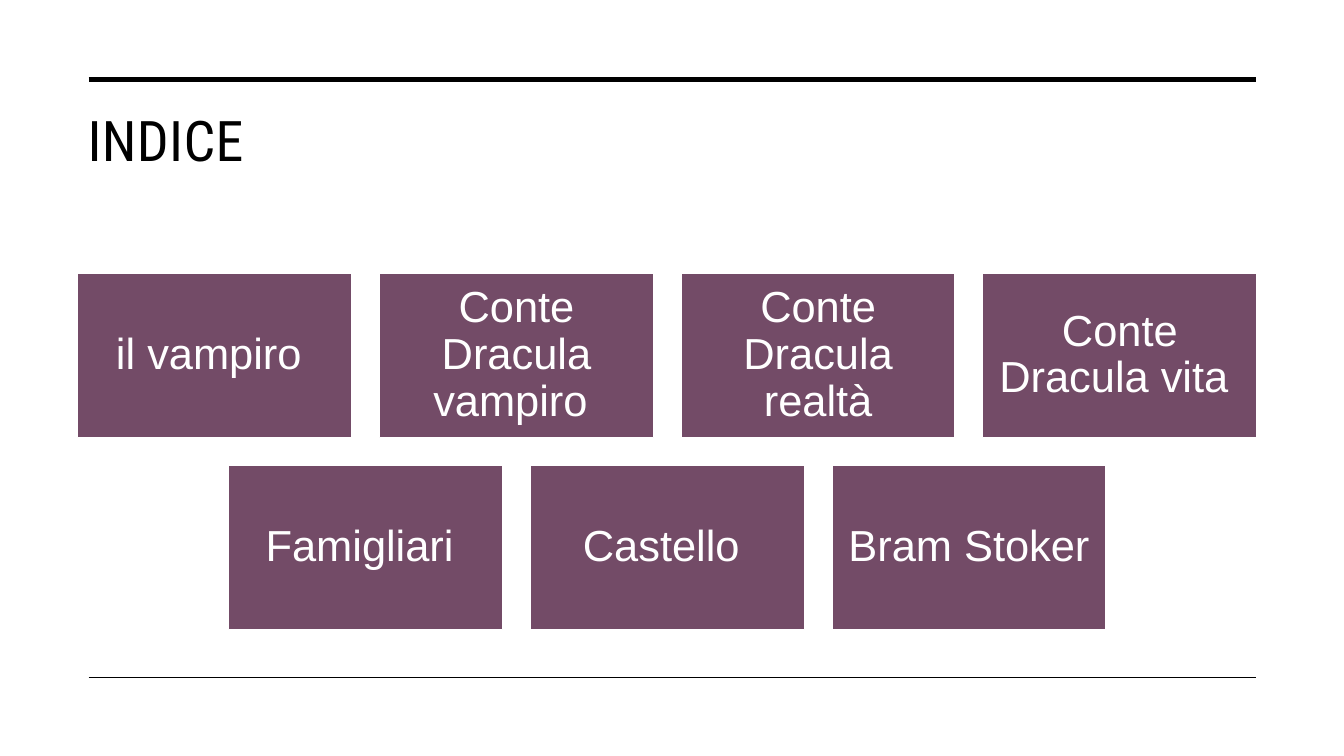
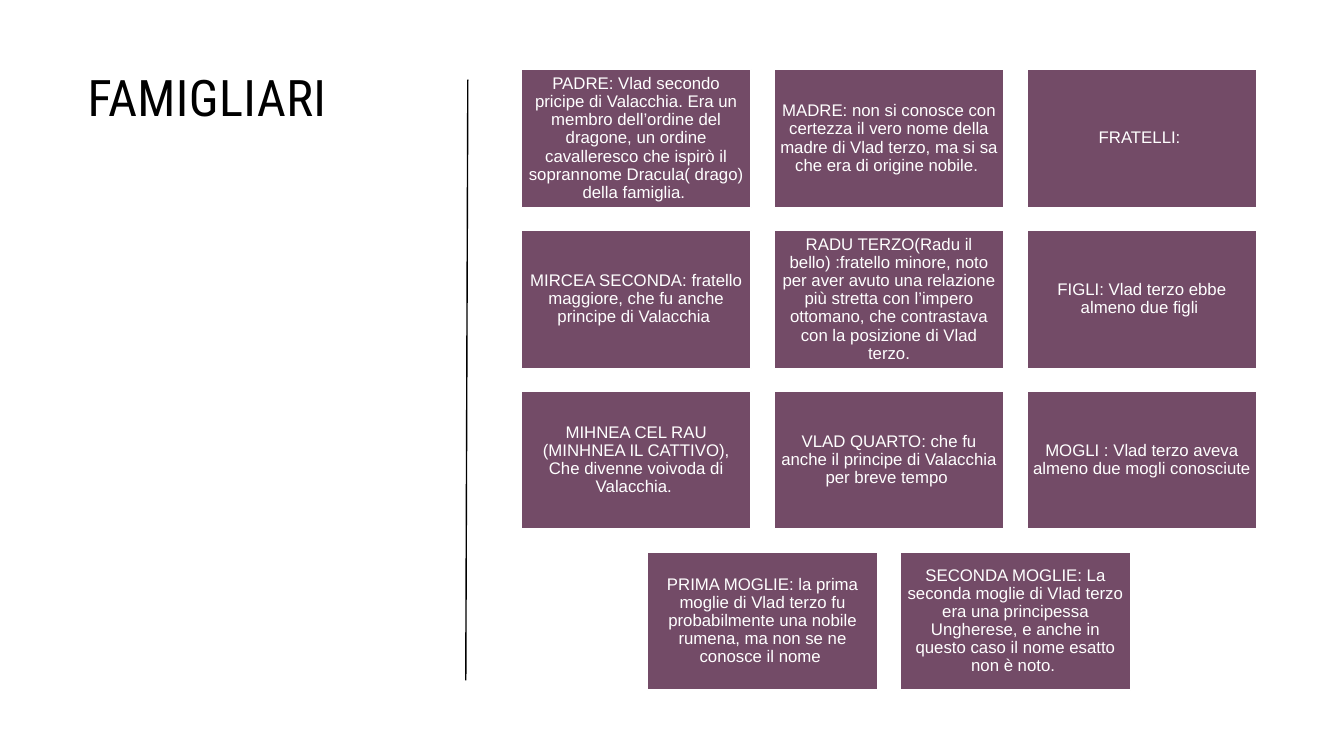
import pptx
import pptx.dml.color
import pptx.enum.shapes
import pptx.enum.text
import pptx.util
from lxml import etree
from pptx.util import Inches

COLORS = {"ink": "000000", "card": "734B67", "paper": "FFFFFF"}
TITLE_FONT = "Roboto Condensed"
CARD_FONT = "Arial"
CARD_ASPECT = 0.6  # height over width
CARD_GAP = 0.1  # share of the card width

SLIDES = [
    {
        "title": "INDICE", "title_box": (0.77, 1, 11.69, 1.43), "title_size": 40,
        # start x, start y, end x, end y, width in points
        "rules": [(0.88, 0.79, 12.46, 0.79, 3.5), (0.88, 6.72, 12.46, 6.72, 1)],
        "origin": (0.77, 2.71), "columns": 4, "card_width": 2.72,
        "card_size": 31, "inset": 0.13,
        "cards": [
            "il vampiro ",
            "Conte Dracula vampiro ",
            "Conte Dracula realtà",
            "Conte Dracula vita ",
            "Famigliari ",
            "Castello ",
            "Bram Stoker ",
        ],
    },
    {
        "title": "FAMIGLIARI", "title_box": (0.77, 0.61, 3.62, 5.75), "title_size": 36,
        "rules": [(4.62, 6.75, 4.64, 0.79, 1)],
        "origin": (5.17, 0.69), "columns": 3, "card_width": 2.28,
        "card_size": 12, "inset": 0.05,
        "cards": [
            "PADRE: Vlad secondo pricipe di Valacchia. Era un membro dell’ordine del "
            "dragone, un ordine cavalleresco che ispirò il soprannome Dracula( drago) "
            "della famiglia. ",
            "MADRE: non si conosce con certezza il vero nome della madre di Vlad terzo, "
            "ma si sa che era di origine nobile. ",
            "FRATELLI: ",
            "MIRCEA SECONDA: fratello maggiore, che fu anche principe di Valacchia ",
            "RADU TERZO(Radu il bello) :fratello minore, noto per aver avuto una "
            "relazione più stretta con l’impero ottomano, che contrastava con la "
            "posizione di Vlad terzo.",
            "FIGLI: Vlad terzo ebbe almeno due figli ",
            "MIHNEA CEL RAU (MINHNEA IL CATTIVO), Che divenne voivoda di Valacchia. ",
            "VLAD QUARTO: che fu anche il principe di Valacchia per breve tempo ",
            "MOGLI : Vlad terzo aveva almeno due mogli conosciute ",
            "PRIMA MOGLIE: la prima moglie di Vlad terzo fu probabilmente una nobile "
            "rumena, ma non se ne conosce il nome ",
            "SECONDA MOGLIE: La seconda moglie di Vlad terzo era una principessa "
            "Ungherese, e anche in questo caso il nome esatto non è noto. ",
        ],
    },
]


def color(name):
    return pptx.dml.color.RGBColor.from_string(COLORS[name])


def set_text(shape, text, font_name, size, color_name):
    """Write one wrapped paragraph and return it."""
    shape.text_frame.word_wrap = True
    shape.text_frame.text = text
    paragraph = shape.text_frame.paragraphs[0]
    font = paragraph.runs[0].font
    font.name = font_name
    font.size = pptx.util.Pt(size)
    font.color.rgb = color(color_name)
    return paragraph


presentation = pptx.Presentation()
presentation.slide_width = Inches(13.33)
presentation.slide_height = Inches(7.5)

for content in SLIDES:
    slide = presentation.slides.add_slide(presentation.slide_layouts[6])

    # Rules
    for start_x, start_y, end_x, end_y, weight in content["rules"]:
        rule = slide.shapes.add_connector(
            pptx.enum.shapes.MSO_CONNECTOR.STRAIGHT,
            Inches(start_x), Inches(start_y), Inches(end_x), Inches(end_y))
        rule.line.color.rgb = color("ink")
        rule.line.width = pptx.util.Pt(weight)
        properties = rule.element.spPr
        etree.SubElement(properties, pptx.oxml.ns.qn("a:effectLst"))

    # Title, with slightly open letter spacing
    title = slide.shapes.add_textbox(*map(Inches, content["title_box"]))
    paragraph = set_text(title, content["title"], TITLE_FONT, content["title_size"], "ink")
    paragraph.runs[0].font._element.set("spc", "30")

    # Cards in rows, a short last row centred
    cards, columns = content["cards"], content["columns"]
    left, top = content["origin"]
    width = content["card_width"]
    height = width * CARD_ASPECT
    gap = width * CARD_GAP
    for index, text in enumerate(cards):
        row, column = divmod(index, columns)
        missing = max(0, (row + 1) * columns - len(cards))
        card = slide.shapes.add_shape(
            pptx.enum.shapes.MSO_SHAPE.RECTANGLE,
            Inches(left + (column + missing / 2) * (width + gap)),
            Inches(top + row * (height + gap)),
            Inches(width), Inches(height))
        card.shadow.inherit = False
        card.fill.solid()
        card.fill.fore_color.rgb = color("card")
        card.line.color.rgb = color("paper")
        card.line.width = pptx.util.Pt(1)
        frame = card.text_frame
        frame.margin_left = frame.margin_right = Inches(content["inset"])
        frame.margin_top = frame.margin_bottom = Inches(content["inset"])
        frame.vertical_anchor = pptx.enum.text.MSO_ANCHOR.MIDDLE
        paragraph = set_text(card, text, CARD_FONT, content["card_size"], "paper")
        paragraph.alignment = pptx.enum.text.PP_ALIGN.CENTER
        paragraph.line_spacing = 0.9

presentation.save("out.pptx")
